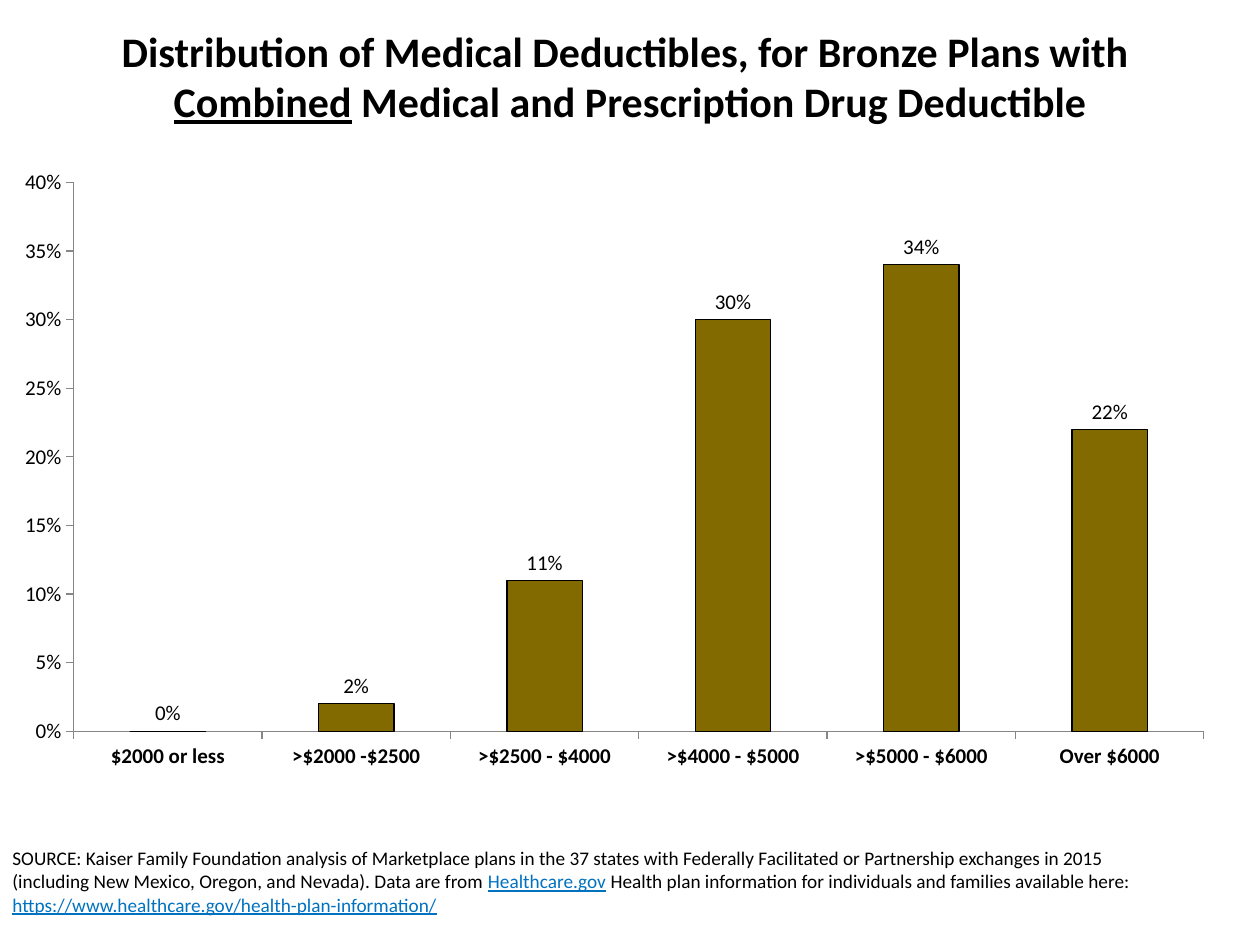
import dataclasses
import typing

import lxml.etree
import pptx
import pptx.chart.data
import pptx.dml.color
import pptx.enum.chart
import pptx.enum.text
import pptx.oxml.ns
import pptx.util

Inches = pptx.util.Inches
COLORS = {"text": "000000", "link": "0072C0", "bar": "826A00", "axis": "868686"}
FONT = "Calibri"
DEDUCTIBLES = {
    "$2000 or less": 0,
    ">$2000 -$2500": 0.02,
    ">$2500 - $4000": 0.11,
    ">$4000 - $5000": 0.3,
    ">$5000 - $6000": 0.34,
    "Over $6000": 0.22,
}
PLOT_AREA = {"x": 0.06, "y": 0.04, "w": 0.92, "h": 0.88}


@dataclasses.dataclass
class Span:
    text: str
    color: str = "text"
    underline: bool = False


TITLE = [
    Span("Distribution of Medical Deductibles, for Bronze Plans with \v"),
    Span("Combined", underline=True),
    Span(" Medical and Prescription Drug Deductible"),
]
SOURCE = [
    Span("SOURCE: Kaiser Family Foundation analysis of Marketplace plans in the 37 states "
         "with Federally Facilitated or Partnership exchanges in 2015 (including New Mexico, "
         "Oregon, and Nevada). Data are from "),
    Span("Healthcare.gov", "link", True),
    Span(" Health plan information for individuals and families available here: "),
    Span("https://www.healthcare.gov/health-plan-information/", "link", True),
]


def rgb(name: str) -> pptx.dml.color.RGBColor:
    return pptx.dml.color.RGBColor.from_string(COLORS[name])


def format_font(font: typing.Any, size: int, color: str = "text", **values: typing.Any) -> None:
    values.update(name=FONT, size=pptx.util.Pt(size))
    for key, value in values.items():
        setattr(font, key, value)
    font.color.rgb = rgb(color)


def write_spans(para: typing.Any, spans: list[Span], size: int, bold: bool) -> None:
    for span in spans:
        run = para.add_run()
        run.text = span.text.rstrip("\v")
        format_font(run.font, size, span.color, bold=bold, underline=span.underline)
        if span.text.endswith("\v"):
            para.add_line_break()


def set_plot_area(chart: typing.Any) -> None:
    """Fix the inner plot area as fractions of the chart frame."""
    qn = pptx.oxml.ns.qn
    plot_area = chart.plots[0]._element.getparent()
    for old in plot_area.findall(qn("c:layout")):
        plot_area.remove(old)
    layout = lxml.etree.Element(qn("c:layout"))
    manual = lxml.etree.SubElement(layout, qn("c:manualLayout"))
    settings = {"layoutTarget": "inner", "xMode": "edge", "yMode": "edge", **PLOT_AREA}
    for tag, value in settings.items():
        lxml.etree.SubElement(manual, qn(f"c:{tag}")).set("val", str(value))
    plot_area.insert(0, layout)


def add_title(page: typing.Any) -> None:
    title = page.shapes.title
    frame = {"left": 0.1, "top": 0.1, "width": 9.8, "height": 1}
    for key, value in frame.items():
        setattr(title, key, Inches(value))
    title.text_frame.vertical_anchor = pptx.enum.text.MSO_ANCHOR.MIDDLE
    para = title.text_frame.paragraphs[0]
    para.alignment = pptx.enum.text.PP_ALIGN.CENTER
    write_spans(para, TITLE, 24, True)


def add_source(page: typing.Any) -> None:
    box = page.shapes.add_textbox(Inches(0), Inches(6.67), Inches(9.25), Inches(0.84))
    box.text_frame.word_wrap = True
    write_spans(box.text_frame.paragraphs[0], SOURCE, 11, False)


def add_chart(page: typing.Any) -> None:
    data = pptx.chart.data.CategoryChartData(number_format="0%")
    data.categories = list(DEDUCTIBLES)
    data.add_series("Series 1", list(DEDUCTIBLES.values()))
    chart = page.shapes.add_chart(
        pptx.enum.chart.XL_CHART_TYPE.COLUMN_CLUSTERED,
        Inches(0), Inches(1.25), Inches(9.75), Inches(4.95), data).chart
    chart.has_legend = False
    chart.has_title = False
    format_font(chart.font, 18)
    set_plot_area(chart)

    # Axes
    for axis, bold in ((chart.category_axis, True), (chart.value_axis, False)):
        axis.has_major_gridlines = False
        axis.major_tick_mark = pptx.enum.chart.XL_TICK_MARK.OUTSIDE
        axis.format.line.color.rgb = rgb("axis")
        axis.format.line.width = pptx.util.Pt(0.75)
        format_font(axis.tick_labels.font, 12, bold=bold)
    scale = {"minimum_scale": 0, "maximum_scale": 0.4, "major_unit": 0.05}
    for key, value in scale.items():
        setattr(chart.value_axis, key, value)
    chart.value_axis.tick_labels.number_format = "0%"
    chart.value_axis.tick_labels.number_format_is_linked = False

    # Columns and their labels
    plot = chart.plots[0]
    plot.gap_width = 150
    plot.vary_by_categories = False
    series = plot.series[0]
    series.format.fill.solid()
    series.format.fill.fore_color.rgb = rgb("bar")
    series.format.line.color.rgb = rgb("text")
    series.format.line.width = pptx.util.Pt(0.75)
    labels = series.data_labels
    settings = {"show_value": True, "number_format": "0%", "number_format_is_linked": False,
                "position": pptx.enum.chart.XL_LABEL_POSITION.OUTSIDE_END}
    for key, value in settings.items():
        setattr(labels, key, value)
    format_font(labels.font, 12, bold=False)


def main() -> None:
    deck = pptx.Presentation()
    deck.slide_width, deck.slide_height = Inches(10), Inches(7.5)
    page = deck.slides.add_slide(deck.slide_layouts.get_by_name("Title Only"))
    add_source(page)
    add_title(page)
    add_chart(page)
    deck.save("out.pptx")


if __name__ == "__main__":
    main()
